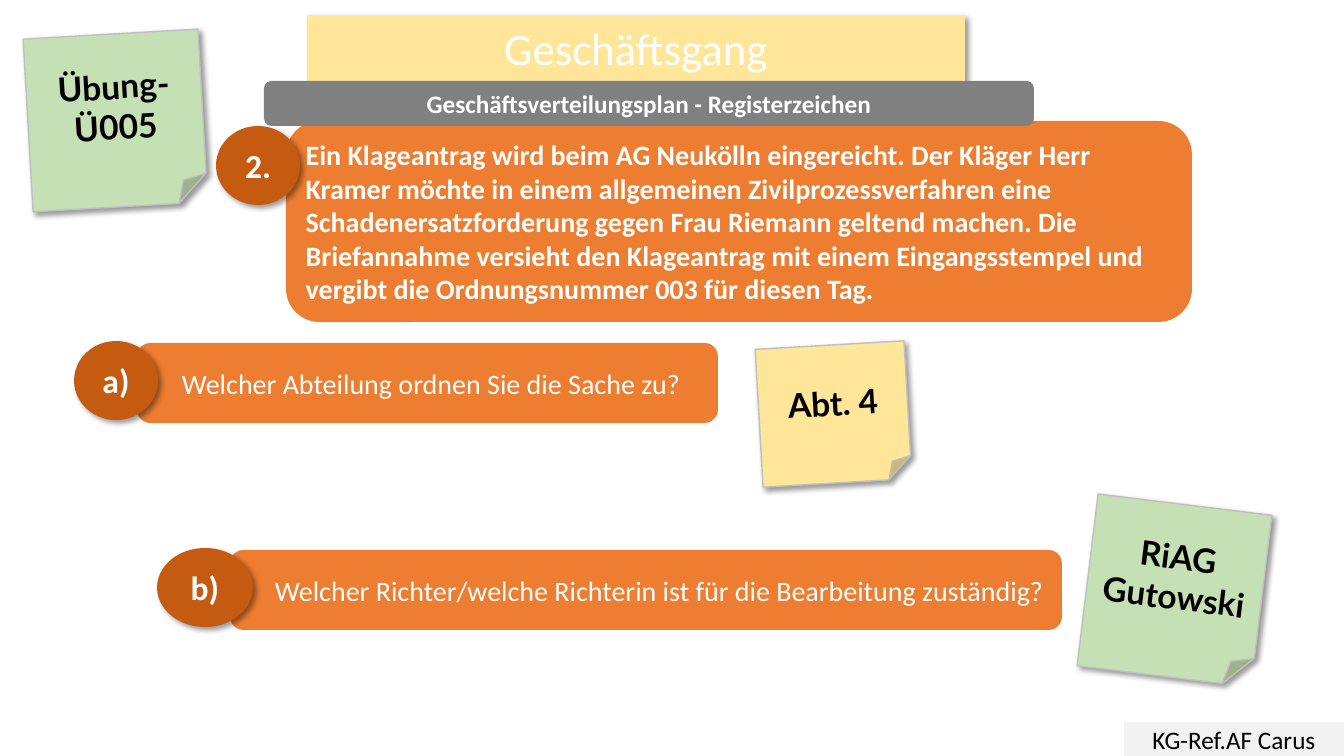
"""Build the exercise slide on allocating a claim to a court department."""
from dataclasses import dataclass

from lxml import etree
from pptx import Presentation
from pptx import util as u
from pptx.dml.color import RGBColor
from pptx.enum import shapes, text
from pptx.oxml import ns

TITLE = ("Geschäftsgang", (307, 15, 658, 66))
FOOTER = ("KG-Ref.AF Carus", (1124, 722, 220, 34))
SUBTITLE = ("Geschäftsverteilungsplan - Registerzeichen", (264, 81, 770, 45))
CASE = (
    "Ein Klageantrag wird beim AG Neukölln eingereicht. Der Kläger Herr Kramer "
    "möchte in einem allgemeinen Zivilprozessverfahren eine Schadenersatzforderung "
    "gegen Frau Riemann geltend machen. Die Briefannahme versieht den Klageantrag "
    "mit einem Eingangsstempel und vergibt die Ordnungsnummer 003 für diesen Tag.",
    (286, 121, 906, 201),
)
CASE_NUMBER = ("2.", (216, 126, 84, 79))
QUESTIONS = [
    ("Welcher Abteilung ordnen Sie die Sache zu?", (137, 343, 581, 80),
     "a)", (74, 341, 84, 79)),
    ("Welcher Richter/welche Richterin ist für die Bearbeitung zuständig?",
     (230, 550, 832, 80), "b)", (157, 548, 96, 79)),
]
NOTES = [
    (["Übung-", "Ü005"], (28, 34, 175, 173), -3.3, "C5E0B4"),
    (["Abt. 4"], (759, 345, 149, 138), -3.3, "FFE699"),
    (["RiAG Gutowski"], (1087, 504, 175, 173), 7, "C5E0B4"),
]


@dataclass(frozen=True)
class Theme:
    """Colours, fonts and type sizes."""
    body_font: str = "Calibri"
    note_font: str = "Lato"
    white: str = "FFFFFF"
    black: str = "000000"
    banner: str = "FFE699"
    bar: str = "ED7D31"
    badge: str = "C55A11"
    subtitle: str = "808080"
    footer: str = "F2F2F2"
    note_edge: str = "BFBFBF"
    title_size: int = 32
    label_size: int = 24
    body_size: int = 20
    small_size: int = 18


THEME = Theme()
PX = 914400 / 100.8
QUESTION_INDENT = 41
GEOMETRY = shapes.MSO_SHAPE
LEFT, CENTER = text.PP_ALIGN.LEFT, text.PP_ALIGN.CENTER


def px(length):
    """Turn pixels into EMU."""
    return u.Emu(round(length * PX))


def cast_shadow(part):
    """Give a part the soft shadow falling to the lower right."""
    effects = etree.SubElement(part._element.spPr, ns.qn("a:effectLst"))
    shadow = etree.SubElement(effects, ns.qn("a:outerShdw"), blurRad="50800",
                              dist="38100", dir="2700000", algn="tl", rotWithShape="0")
    colour = etree.SubElement(shadow, ns.qn("a:srgbClr"), val=THEME.black)
    etree.SubElement(colour, ns.qn("a:alpha"), val="40000")


def paint(part, fill, edge=None):
    """Set the fill and the outline."""
    part.fill.solid()
    part.fill.fore_color.rgb = RGBColor.from_string(fill)
    if edge:
        part.line.color.rgb = RGBColor.from_string(edge)
        part.line.width = u.Pt(1)
    else:
        part.line.fill.background()


def write(part, lines, size, colour=THEME.white, bold=False,
          align=CENTER, font=THEME.body_font):
    """Fill a part with one paragraph per line."""
    frame = part.text_frame
    frame.word_wrap = True
    frame.auto_size = text.MSO_AUTO_SIZE.NONE
    frame.vertical_anchor = text.MSO_ANCHOR.MIDDLE
    for index, line in enumerate(lines):
        paragraph = frame.add_paragraph() if index else frame.paragraphs[0]
        paragraph.alignment = align
        run = paragraph.add_run()
        run.text = line
        run.font.name, run.font.size, run.font.bold = font, u.Pt(size), bold
        run.font.color.rgb = RGBColor.from_string(colour)


def add_part(parent, geometry, box, fill, edge=None, shadow=False):
    """Add one filled shape, flat or with a shadow."""
    part = parent.add_shape(geometry, *map(px, box))
    paint(part, fill, edge)
    if shadow:
        cast_shadow(part)
    else:
        part.shadow.inherit = False
    return part


def add_badge(parent, label, box):
    """Add the round number of a case or question."""
    badge = add_part(parent, GEOMETRY.FLOWCHART_CONNECTOR, box, THEME.badge, shadow=True)
    write(badge, [label], THEME.label_size, bold=True)


def add_title(slide):
    """Turn the title placeholder into the rounded banner."""
    wording, box = TITLE
    title = slide.shapes.title
    title.left, title.top, title.width, title.height = map(px, box)
    outline = etree.SubElement(title._element.spPr, ns.qn("a:prstGeom"), prst="roundRect")
    etree.SubElement(outline, ns.qn("a:avLst"))
    paint(title, THEME.banner)
    cast_shadow(title)
    write(title, [wording], THEME.title_size)


def add_note(parent, lines, box, angle, fill):
    """Add one tilted sticky note."""
    note = add_part(parent, GEOMETRY.FOLDED_CORNER, box, fill, THEME.note_edge, True)
    note.rotation = angle
    write(note, lines, THEME.label_size, THEME.black, True, font=THEME.note_font)


def add_question(parent, question, bar_box, label, badge_box):
    """Add a question bar grouped with its badge."""
    group = parent.add_group_shape().shapes
    bar = add_part(group, GEOMETRY.ROUNDED_RECTANGLE, bar_box, THEME.bar)
    write(bar, [question], THEME.body_size, align=LEFT)
    bar.text_frame.margin_left = px(QUESTION_INDENT)
    add_badge(group, label, badge_box)


def main():
    """Compose the slide and save it."""
    deck = Presentation()
    deck.slide_width, deck.slide_height = px(1344), px(756)
    slide = deck.slides.add_slide(deck.slide_layouts[5])
    canvas = slide.shapes
    add_title(slide)

    wording, box = FOOTER
    footer = add_part(canvas, GEOMETRY.RECTANGLE, box, THEME.footer)
    write(footer, [wording], THEME.small_size, THEME.black)

    wording, box = CASE
    case = add_part(canvas, GEOMETRY.ROUNDED_RECTANGLE, box, THEME.bar)
    write(case, [wording], THEME.body_size, bold=True, align=LEFT)
    add_badge(canvas, *CASE_NUMBER)

    wording, box = SUBTITLE
    subtitle = add_part(canvas, GEOMETRY.ROUNDED_RECTANGLE, box, THEME.subtitle)
    write(subtitle, [wording], THEME.small_size, bold=True)

    for note in NOTES:
        add_note(canvas, *note)
    for question in QUESTIONS:
        add_question(canvas, *question)
    deck.save("out.pptx")


if __name__ == "__main__":
    main()
